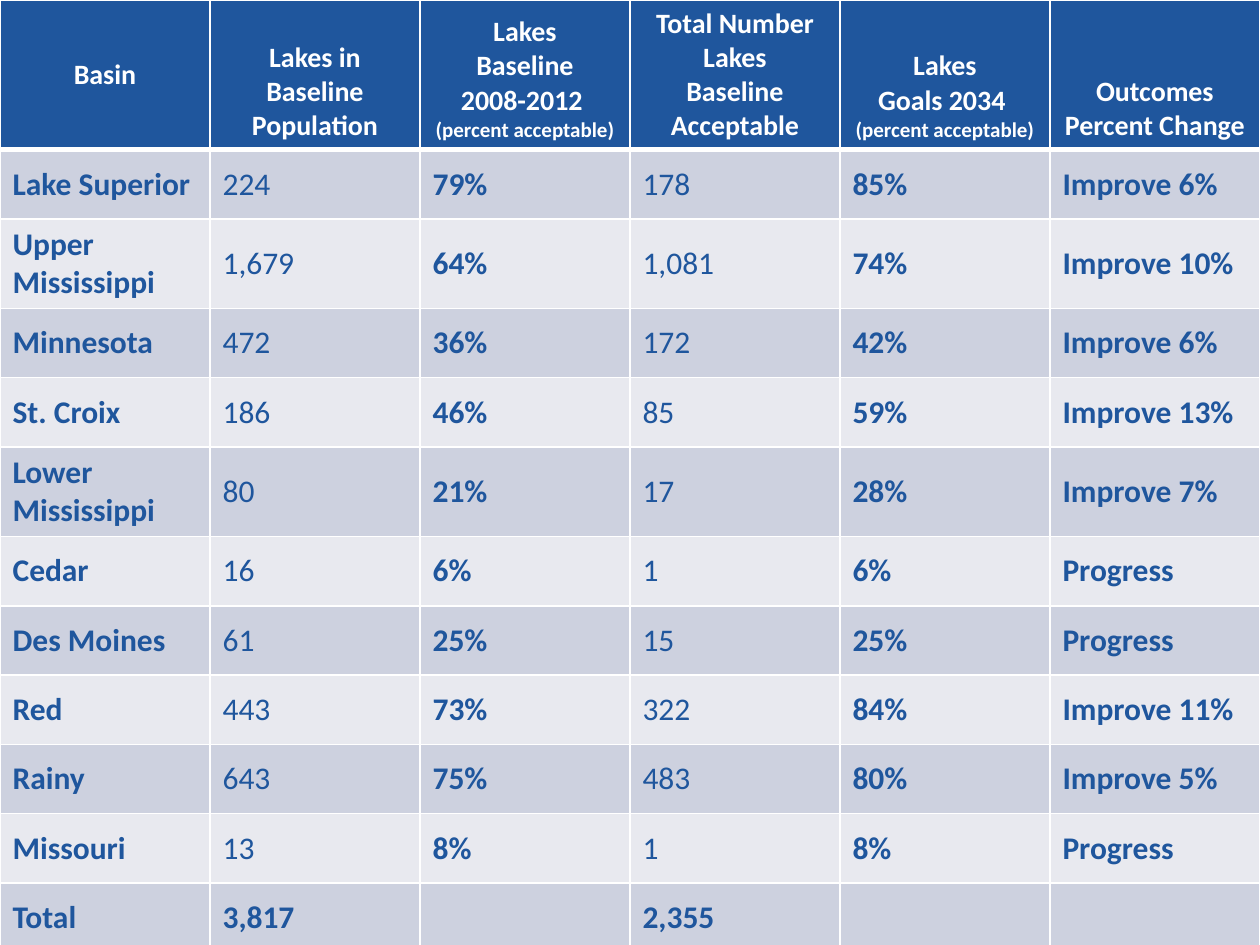
from lxml import etree
from pptx import Presentation
from pptx.dml.color import RGBColor
from pptx.enum.text import MSO_ANCHOR, PP_ALIGN
from pptx.oxml.ns import qn
from pptx.util import Inches, Pt

MIDDLE, BOTTOM = MSO_ANCHOR.MIDDLE, MSO_ANCHOR.BOTTOM
CENTER = PP_ALIGN.CENTER
BLUE, WHITE = "1F569D", "FFFFFF"
BANDS = ("CDD1DF", "E8E9EF")
WIDE, HIGH = 10, 7.5
HEAD_H, ROW_H, TALL_H = 1.14, 0.55, 0.68
NOTE = "(percent acceptable)"
HEADS = [
    ["Basin"],
    ["Lakes in", "Baseline", "Population"],
    ["Lakes", "Baseline", "2008-2012 ", NOTE],
    ["Total Number Lakes", "Baseline", "Acceptable"],
    ["Lakes", "Goals 2034 ", NOTE],
    ["Outcomes", "Percent Change"],
]
ROWS = [
    ["Lake Superior", "224", "79%", "178", "85%", "Improve 6%"],
    ["Upper Mississippi", "1,679", "64%", "1,081", "74%", "Improve 10%"],
    ["Minnesota", "472", "36%", "172", "42%", "Improve 6%"],
    ["St. Croix", "186", "46%", "85", "59%", "Improve 13%"],
    ["Lower Mississippi", "80", "21%", "17", "28%", "Improve 7%"],
    ["Cedar", "16", "6%", "1", "6%", "Progress"],
    ["Des Moines", "61", "25%", "15", "25%", "Progress"],
    ["Red", "443", "73%", "322", "84%", "Improve 11%"],
    ["Rainy", "643", "75%", "483", "80%", "Improve 5%"],
    ["Missouri", "13", "8%", "1", "8%", "Progress"],
    ["Total", "3,817", "", "2,355", "", ""],
]


def paint(fill, color):
    """Set a solid fill from a hex string."""
    fill.solid()
    fill.fore_color.rgb = RGBColor.from_string(color)


def edge(cell, side, width):
    """Draw one white border on a cell."""
    line = etree.SubElement(cell._tc.get_or_add_tcPr(), qn("a:ln" + side), w=str(Pt(width)))
    solid = etree.SubElement(line, qn("a:solidFill"))
    etree.SubElement(solid, qn("a:srgbClr"), val=WHITE)


def style(cell, color, top=1, base=1):
    """Give a cell its borders, fill and middle anchor."""
    for side, width in zip("LRTB", (1, 1, top, base)):
        edge(cell, side, width)
    paint(cell.fill, color)
    cell.vertical_anchor = MIDDLE


def write(para, text, size, color, bold=True):
    """Add one formatted run to a paragraph."""
    run = para.add_run()
    run.text = text
    font = run.font
    font.name, font.size, font.bold = "Calibri", Pt(size), bold
    paint(font.fill, color)


def head(cell, lines, anchor):
    """Fill a header cell with centred lines."""
    style(cell, BLUE, base=3)
    cell.vertical_anchor = anchor
    cell.margin_left = cell.margin_right = Inches(0.01)
    para = cell.text_frame.paragraphs[0]
    para.alignment = CENTER
    for i, text in enumerate(lines):
        if i:
            para.add_line_break()
        write(para, text, 12 if text == NOTE else 16, WHITE)


def body(cell, text, row, bold):
    """Fill a banded body cell."""
    style(cell, BANDS[row % 2], top=1 if row else 3)
    if text:
        write(cell.text_frame.paragraphs[0], text, 18, BLUE, bold)


def main():
    """Build the lake goals table."""
    deck = Presentation()
    deck.slide_width, deck.slide_height = Inches(WIDE), Inches(HIGH)
    slide = deck.slides.add_slide(deck.slide_layouts[6])
    frame = slide.shapes.add_table(len(ROWS) + 1, len(HEADS), 0, 0, Inches(WIDE), Inches(HIGH))
    table = frame.table
    for col in table.columns:
        col.width = Inches(WIDE / len(HEADS))
    table.rows[0].height = Inches(HEAD_H)
    for c, lines in enumerate(HEADS):
        head(table.cell(0, c), lines, BOTTOM if c else MIDDLE)
    for r, row in enumerate(ROWS):
        tall = row[0].endswith("Mississippi")
        table.rows[r + 1].height = Inches(TALL_H if tall else ROW_H)
        for c, text in enumerate(row):
            body(table.cell(r + 1, c), text, r, c not in (1, 3) or row[0] == "Total")
    deck.save("out.pptx")


if __name__ == "__main__":
    main()
